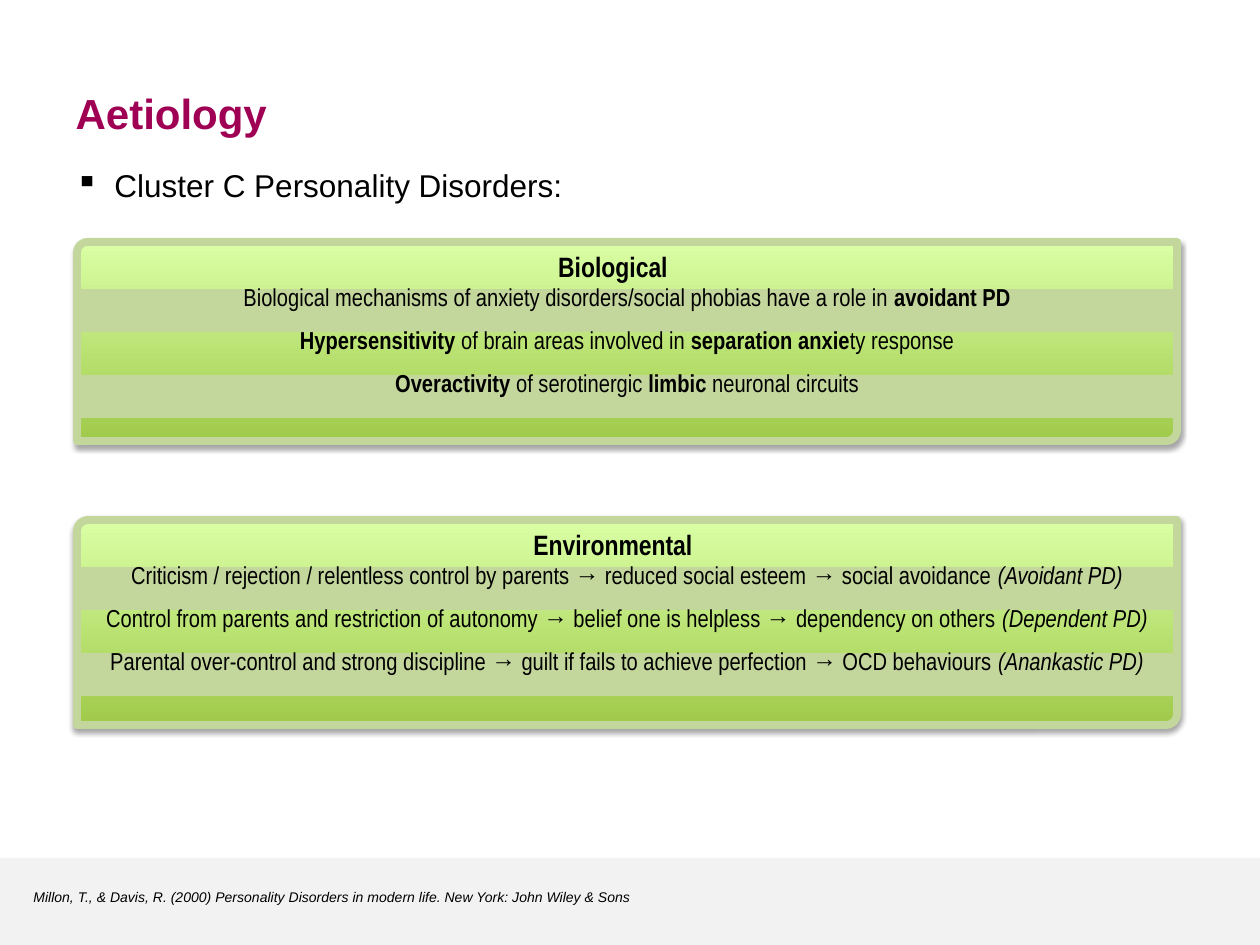
from dataclasses import dataclass
from lxml import etree
from pptx import Presentation
from pptx import util as u
from pptx.dml.color import RGBColor
from pptx.enum import shapes, text
from pptx.oxml import ns


@dataclass(frozen=True)
class Theme:
    """Hold the colours, fonts and type sizes of the slide."""
    title: str = "A00054"
    ink: str = "000000"
    band: str = "F2F2F2"
    edge: str = "C3D69B"
    dark: str = "A0CA4A"
    light: str = "DAFFA5"
    sans: str = "Arial"
    slim: str = "Arial Narrow"
    head: int = 24
    lead: int = 18
    panel: int = 16
    row: int = 14
    note: int = 8


THEME = Theme()
PLAIN = "{2D5ABB26-0587-4C30-8999-92F81FD0307C}"
LEFT, WIDE, ROW, DROP = 77, 1100, 43, 47
PANELS = [
    ("Biological", 242, 199, [
        [("Biological mechanisms of anxiety disorders/social phobias have a role in ", ""),
         ("avoidant PD", "b")],
        [("Hypersensitivity", "b"), (" of brain areas involved in ", ""),
         ("separation anxie", "b"), ("ty response", "")],
        [("Overactivity", "b"), (" of serotinergic ", ""), ("limbic", "b"),
         (" neuronal circuits", "")],
    ]),
    ("Environmental", 520, 205, [
        [("Criticism / rejection / relentless control by parents → reduced social esteem"
          " → social avoidance ", ""), ("(Avoidant PD)", "i")],
        [("Control from parents and restriction of autonomy → belief one is helpless"
          " → dependency on others ", ""), ("(Dependent PD)", "i")],
        [("Parental over-control and strong discipline → guilt if fails to achieve perfection"
          " → OCD behaviours ", ""), ("(Anankastic PD)", "i")],
    ]),
]


def px(num):
    """Turn pixels into EMU."""
    return u.Emu(round(num * 914400 / 126))


def rgb(code):
    """Turn a hex code into a colour."""
    return RGBColor.from_string(code)


def style(run, face, size, color=THEME.ink, mark=""):
    """Format one run; mark may hold b and i."""
    font = run.font
    font.name, font.size = face, u.Pt(size)
    font.color.rgb = rgb(color)
    font.bold, font.italic = "b" in mark, "i" in mark


def add_sub(node, tag, **attrs):
    """Append a DrawingML child to a node."""
    return etree.SubElement(node, ns.qn(tag), attrs)


def add_text(home, box, words, face, size, mark=""):
    """Add a one-line text box and return it."""
    item = home.add_textbox(*map(px, box))
    frame = item.text_frame
    frame.word_wrap = True
    frame.text = words
    style(frame.paragraphs[0].runs[0], face, size, mark=mark)
    return item


def add_title(slide, box, words):
    """Place and format the title."""
    item = slide.shapes.title
    item.left, item.top, item.width, item.height = map(px, box)
    frame = item.text_frame
    frame.text = words
    frame.vertical_anchor = text.MSO_ANCHOR.MIDDLE
    para = frame.paragraphs[0]
    para.alignment = text.PP_ALIGN.LEFT
    style(para.runs[0], THEME.sans, THEME.head, THEME.title, "b")


def add_band(slide, box):
    """Add the plain footer band."""
    item = slide.shapes.add_shape(shapes.MSO_SHAPE.RECTANGLE, *map(px, box))
    item.shadow.inherit = False
    item.fill.solid()
    item.fill.fore_color.rgb = rgb(THEME.band)
    item.line.fill.background()


def add_bullet(slide, box, words):
    """Add a text line with a square bullet."""
    item = add_text(slide.shapes, box, words, THEME.sans, THEME.lead)
    props = item.text_frame.paragraphs[0]._p.get_or_add_pPr()
    props.set("marL", str(px(39)))
    props.set("indent", str(px(-39)))
    add_sub(props, "a:buChar", char="▪")


def add_card(home, box):
    """Add a gradient card with a soft shadow."""
    card = home.add_shape(shapes.MSO_SHAPE.ROUND_2_DIAG_RECTANGLE, *map(px, box))
    card.adjustments[0], card.adjustments[1] = 0.054, 0
    card.fill.gradient()
    card.fill.gradient_angle = 90
    for stop, place, color in zip(card.fill.gradient_stops, (0, 1), (THEME.dark, THEME.light)):
        stop.position = place
        stop.color.rgb = rgb(color)
    card.line.color.rgb = rgb(THEME.edge)
    card.line.width = u.Pt(4.5)
    card.shadow.inherit = False
    glow = add_sub(card._element.spPr.find(ns.qn("a:effectLst")), "a:outerShdw",
                   blurRad=str(u.Pt(3.1)), dist=str(u.Pt(1.8)), dir="5400000", rotWithShape="0")
    add_sub(add_sub(glow, "a:srgbClr", val=THEME.ink), "a:alpha", val="35000")


def add_rows(slide, box, rows):
    """Add a one-column table with every other row filled."""
    frame = slide.shapes.add_table(len(rows), 1, *map(px, box))
    table = frame.table
    table.first_row = table.horz_banding = False
    table._tbl.tblPr.find(ns.qn("a:tableStyleId")).text = PLAIN
    for num, parts in enumerate(rows):
        table.rows[num].height = px(ROW)
        cell = table.cell(num, 0)
        cell.margin_top = cell.margin_bottom = 0
        if num % 2:
            cell.fill.background()
        else:
            cell.fill.solid()
            cell.fill.fore_color.rgb = rgb(THEME.edge)
        para = cell.text_frame.paragraphs[0]
        para.alignment = text.PP_ALIGN.CENTER
        for words, mark in parts:
            run = para.add_run()
            run.text = words
            style(run, THEME.slim, THEME.row, mark=mark)


def add_panel(slide, name, top, high, rows):
    """Add a headed card and its rows."""
    group = slide.shapes.add_group_shape().shapes
    add_card(group, (LEFT, top, WIDE, high))
    head = add_text(group, (LEFT, top, WIDE - 28, high), name, THEME.slim, THEME.panel, "b")
    head.text_frame.margin_top = px(8)
    head.text_frame.paragraphs[0].alignment = text.PP_ALIGN.CENTER
    add_rows(slide, (LEFT, top + DROP, WIDE, ROW * len(rows)), rows)


def main():
    """Build and save the slide."""
    deck = Presentation()
    deck.slide_width, deck.slide_height = px(1260), px(945)
    slide = deck.slides.add_slide(deck.slide_layouts[5])
    add_band(slide, (0, 858, 1260, 87))
    add_title(slide, (63, 78, 1071, 69), "Aetiology")
    add_bullet(slide, (63, 160, 1159, 50), "Cluster C Personality Disorders:")
    for panel in PANELS:
        add_panel(slide, *panel)
    add_text(slide.shapes, (21, 882, 1053, 30),
             "Millon, T., & Davis, R. (2000) Personality Disorders in modern life."
             " New York: John Wiley & Sons", THEME.sans, THEME.note, "i")
    deck.save("out.pptx")


if __name__ == "__main__":
    main()
